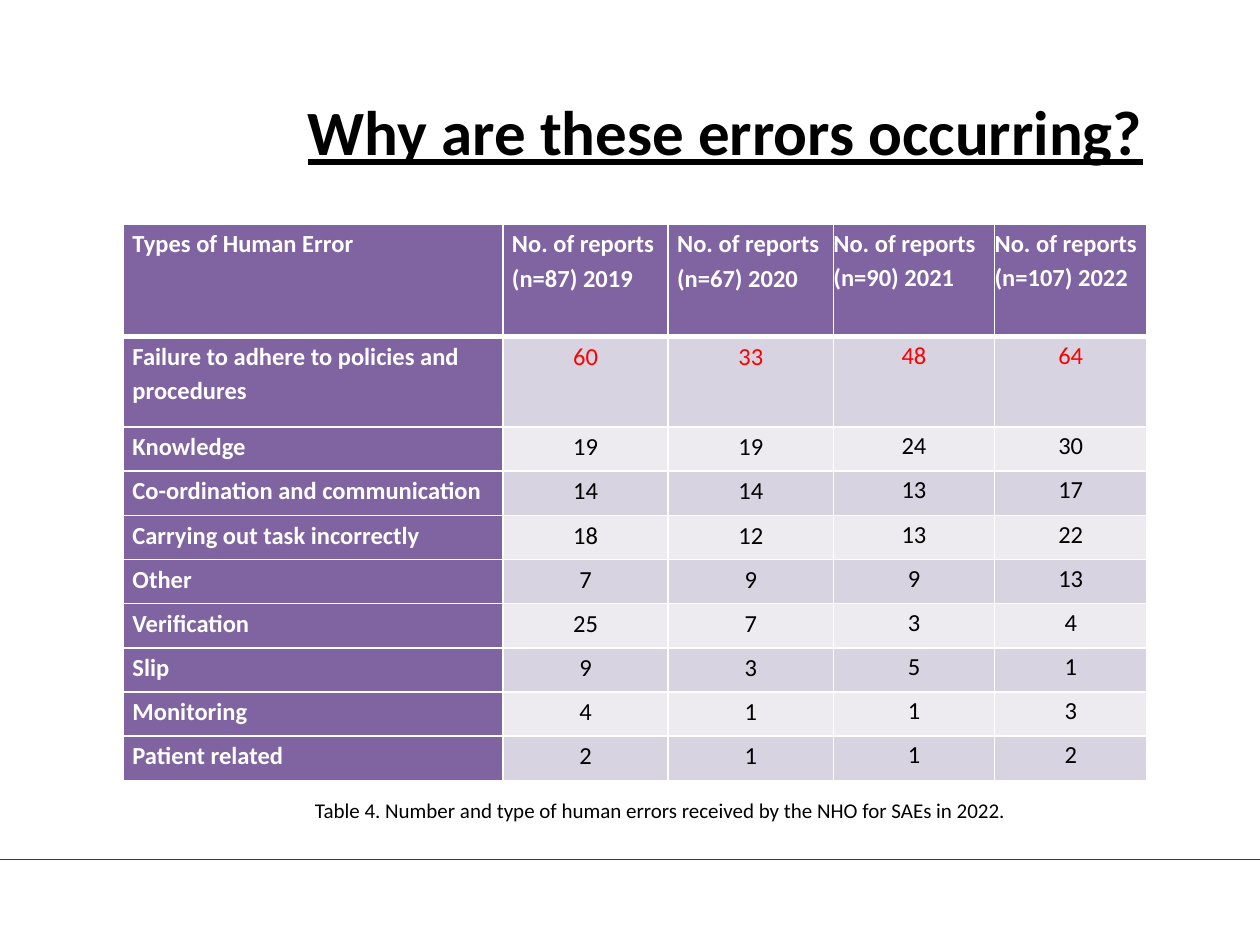
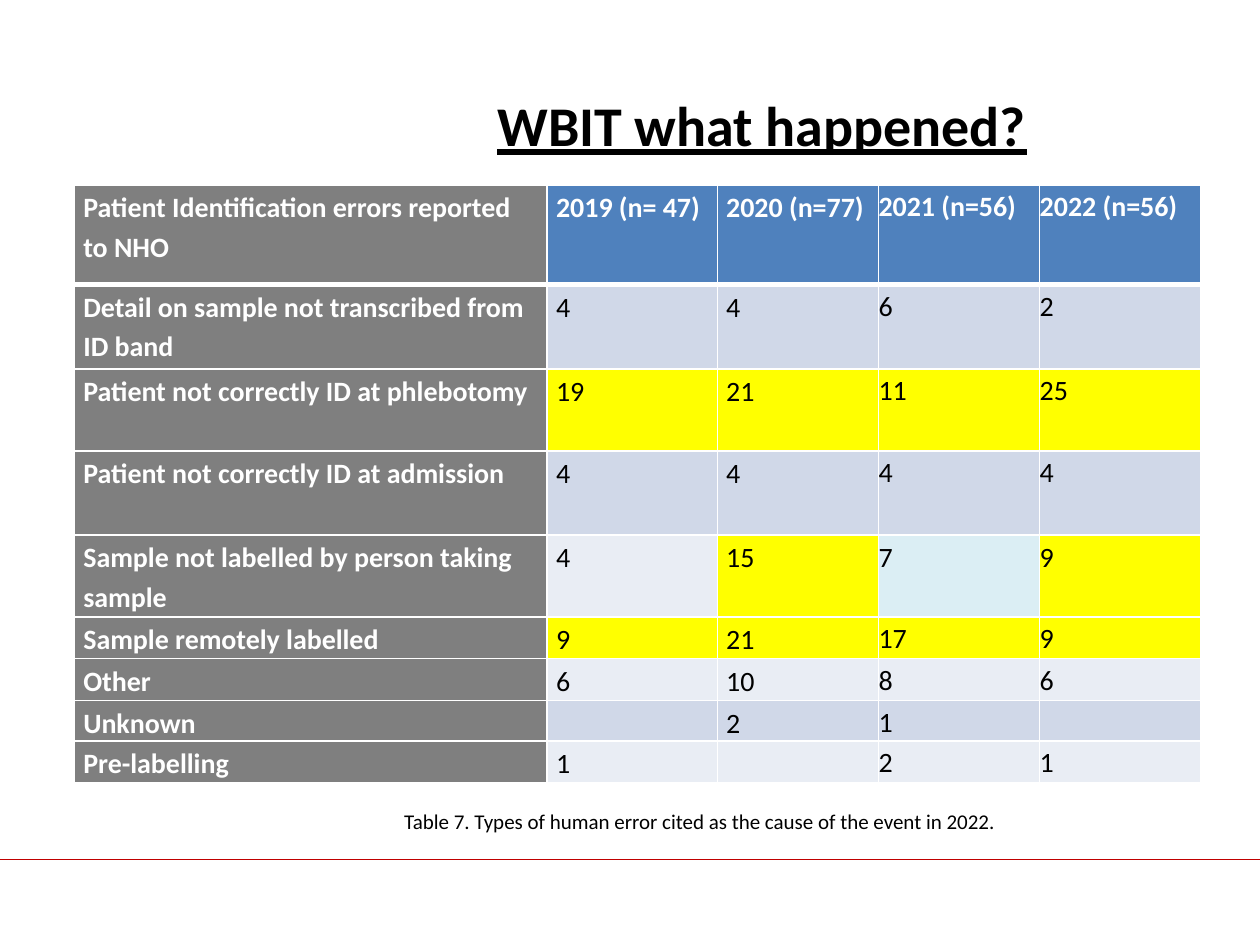
from dataclasses import dataclass

from lxml import etree
from pptx import Presentation
from pptx import util as u
from pptx.dml.color import RGBColor
from pptx.enum import text
from pptx.oxml.ns import qn


@dataclass(frozen=True)
class Theme:
    """Colours, font and type sizes of the deck."""

    font: str = "Calibri"
    ink: str = "000000"
    white: str = "FFFFFF"
    alert: str = "FF0000"
    rule: str = "C00000"
    purple: str = "8064A2"
    lilac: tuple = ("EDEAF0", "D8D3E0")
    grey: str = "7F7F7F"
    blue: str = "4F81BD"
    sky: tuple = ("E9EDF4", "D0D8E8")
    aqua: str = "DBEEF4"
    yellow: str = "FFFF00"
    caption: int = 12
    thin: int = 1
    thick: int = 3


THEME = Theme()

HUMAN_ERRORS = (
    ("Types of Human Error", "No. of reports (n=87) 2019", "No. of reports (n=67) 2020",
     "No. of reports (n=90) 2021", "No. of reports (n=107) 2022"),
    ("Failure to adhere to policies and procedures", 60, 33, 48, 64),
    ("Knowledge", 19, 19, 24, 30),
    ("Co-ordination and communication", 14, 14, 13, 17),
    ("Carrying out task incorrectly", 18, 12, 13, 22),
    ("Other", 7, 9, 9, 13),
    ("Verification", 25, 7, 3, 4),
    ("Slip", 9, 3, 5, 1),
    ("Monitoring", 4, 1, 1, 3),
    ("Patient related", 2, 1, 1, 2),
)

IDENTIFICATION_ERRORS = (
    ("Patient Identification errors reported to NHO", "2019 (n= 47)", "2020 (n=77)",
     "2021 (n=56)", "2022 (n=56)"),
    ("Detail on sample not transcribed from ID band", 4, 4, 6, 2),
    ("Patient not correctly ID at phlebotomy", 19, 21, 11, 25),
    ("Patient not correctly ID at admission", 4, 4, 4, 4),
    ("Sample not labelled by person taking sample", 4, 15, 7, 9),
    ("Sample remotely labelled", 9, 21, 17, 9),
    ("Other", 6, 10, 8, 6),
    ("Unknown", "", 2, 1, ""),
    ("Pre-labelling", 1, "", 2, 1),
)


@dataclass(frozen=True)
class TableLook:
    """Colours, type and alignment of one table."""

    header: str
    stub: str
    bands: tuple
    size: int
    align: text.PP_ALIGN
    fills: dict
    inks: dict


def cm(*lengths):
    """Convert centimetre values to lengths."""
    return [u.Cm(length) for length in lengths]


def style_run(run, size, colour=THEME.ink, bold=False, underline=False):
    """Format one run in the deck font."""
    font = run.font
    font.name, font.size, font.bold = THEME.font, u.Pt(size), bold
    font.underline = underline
    font.color.rgb = RGBColor.from_string(colour)


def add_footer_rule(prs, slide):
    """Draw the footer rule and place it on the slide master."""
    rule = slide.shapes.add_connector(1, *cm(0, 17.32, 25.4, 17.32))
    rule.line.color.rgb = RGBColor.from_string(THEME.rule)
    rule.line.width = u.Pt(0.75)
    etree.SubElement(rule.element.spPr, qn("a:effectLst"))
    rule.element.nvCxnSpPr.cNvPr.id = 99
    prs.slide_master.shapes.element.append(rule.element)


def set_title(slide, wording, box, size, left_inset=0.25, top_inset=0.13):
    """Fill and place the underlined title."""
    title = slide.shapes.title
    title.left, title.top, title.width, title.height = cm(*box)
    frame = title.text_frame
    frame.text = wording
    frame.vertical_anchor = text.MSO_ANCHOR.MIDDLE
    frame.margin_left, frame.margin_top = cm(left_inset, top_inset)
    heading = frame.paragraphs[0]
    heading.alignment = text.PP_ALIGN.CENTER
    style_run(heading.runs[0], size, bold=True, underline=True)


def add_caption(slide, wording, box):
    """Add the one-line caption under a table."""
    frame = slide.shapes.add_textbox(*cm(*box)).text_frame
    frame.text = wording
    frame.word_wrap = False
    frame.auto_size = text.MSO_AUTO_SIZE.SHAPE_TO_FIT_TEXT
    style_run(frame.paragraphs[0].runs[0], THEME.caption)


def set_borders(cell, row):
    """Draw white cell borders, thicker between header and body."""
    properties = cell._tc.get_or_add_tcPr()
    thick_edge = {0: "B", 1: "T"}.get(row)
    for edge in "LRTB":
        width = THEME.thick if edge == thick_edge else THEME.thin
        line = etree.SubElement(properties, qn(f"a:ln{edge}"), w=str(u.Pt(width)))
        fill = etree.SubElement(line, qn("a:solidFill"))
        etree.SubElement(fill, qn("a:srgbClr"), val=THEME.white)


def fill_cell(cell, value, row, column, look):
    """Write and format one table cell."""
    labelled = row == 0 or column == 0
    inset = 0 if column > 2 else 0.18
    cell.margin_left, cell.margin_right = cm(inset, inset)
    cell.margin_top, cell.margin_bottom = cm(0.02 if inset else 0, 0)
    set_borders(cell, row)
    fill = look.stub if column == 0 else look.header if row == 0 else look.bands[row % 2]
    cell.fill.solid()
    cell.fill.fore_color.rgb = RGBColor.from_string(look.fills.get((row, column), fill))
    cell.text_frame.text = str(value)
    entry = cell.text_frame.paragraphs[0]
    entry.line_spacing = 1.15
    entry.alignment = text.PP_ALIGN.LEFT if labelled else look.align
    for run in entry.runs:
        ink = THEME.white if labelled else look.inks.get((row, column), THEME.ink)
        style_run(run, look.size, ink, bold=labelled)
    if not entry.runs:
        etree.SubElement(entry._p, qn("a:endParaRPr"), sz=str(look.size * 100))


def add_error_table(slide, records, origin, widths, heights, look):
    """Add a table of error counts by year."""
    frame = slide.shapes.add_table(
        len(records), len(widths), *cm(*origin, sum(widths), sum(heights)))
    table = frame.table
    for column, width in zip(table.columns, widths):
        column.width = u.Cm(width)
    for row, height in zip(table.rows, heights):
        row.height = u.Cm(height)
    for r, record in enumerate(records):
        for c, value in enumerate(record):
            fill_cell(table.cell(r, c), value, r, c, look)


def main():
    """Build the two slides and save them."""
    prs = Presentation()
    prs.slide_width, prs.slide_height = cm(25.4, 19.05)
    title_only = prs.slide_layouts[5]

    causes = prs.slides.add_slide(title_only)
    add_footer_rule(prs, causes)
    set_title(causes, "Why are these errors occurring?", (5.11, 1.32, 19.02, 2.62), 36)
    causes_look = TableLook(
        THEME.purple, THEME.purple, THEME.lilac, 14, text.PP_ALIGN.CENTER,
        fills={}, inks={(1, year): THEME.alert for year in range(1, 5)})
    add_error_table(causes, HUMAN_ERRORS, (2.49, 4.52), (7.65, 3.33, 3.33, 3.25, 3.07),
                    (2.26, 1.83) + (0.89,) * 8, causes_look)
    add_caption(causes, "Table 4. Number and type of human errors received by the NHO "
                "for SAEs in 2022.", (6.1, 15.95, 14.48, 0.76))

    wbit = prs.slides.add_slide(title_only)
    set_title(wbit, "WBIT what happened?", (3.1, 0.76, 21.03, 3.18), 32, 3.75, 0.42)
    highlights = {(row, year): THEME.yellow for row in (2, 4, 5) for year in range(1, 5)}
    highlights |= {(4, 1): THEME.sky[0], (4, 3): THEME.aqua}
    wbit_look = TableLook(THEME.blue, THEME.grey, THEME.sky, 16, text.PP_ALIGN.LEFT,
                          fills=highlights, inks={})
    add_error_table(wbit, IDENTIFICATION_ERRORS, (1.5, 3.73),
                    (9.53, 3.43) + (3.25,) * 3,
                    (2.01, 1.7, 1.65, 1.7, 1.65, 0.84, 0.84, 0.79, 0.84), wbit_look)
    add_caption(wbit, "Table 7. Types of human error cited as the cause of the event "
                "in 2022.", (7.9, 16.18, 12.45, 0.76))

    prs.save("out.pptx")


if __name__ == "__main__":
    main()
